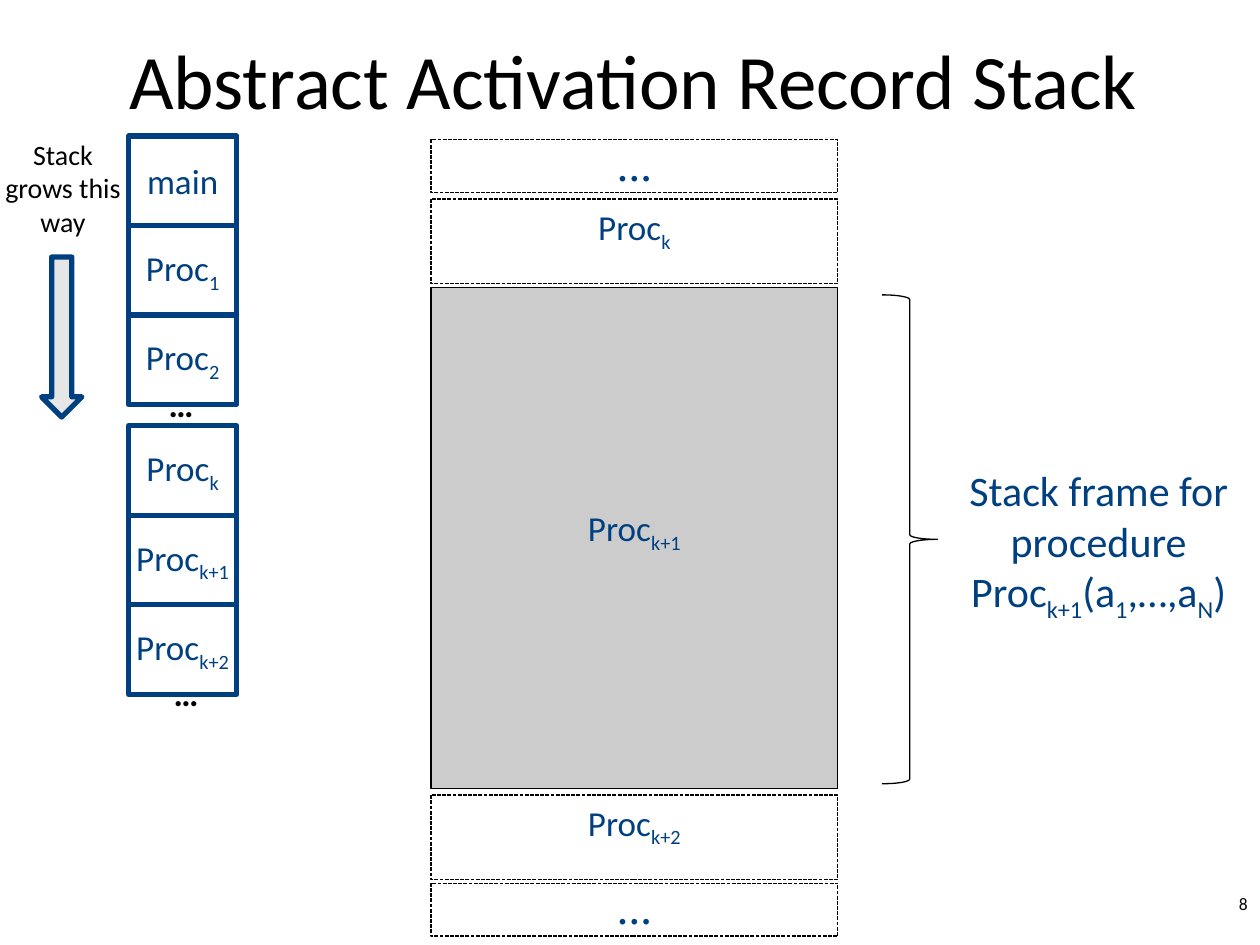
from pptx import Presentation
from pptx.dml.color import RGBColor
from pptx.enum.dml import MSO_LINE
from pptx.enum.shapes import MSO_SHAPE
from pptx.enum.text import MSO_ANCHOR, PP_ALIGN
from pptx.util import Emu, Pt

PX = 9144
TITLE_ONLY = 5
RECTANGLE, BRACE, ARROW = MSO_SHAPE.RECTANGLE, MSO_SHAPE.LEFT_BRACE, MSO_SHAPE.DOWN_ARROW
SHORT_DASH = MSO_LINE.SQUARE_DOT
TOP, MIDDLE = MSO_ANCHOR.TOP, MSO_ANCHOR.MIDDLE
LEFT, CENTER, RIGHT = PP_ALIGN.LEFT, PP_ALIGN.CENTER, PP_ALIGN.RIGHT

BLACK, NAVY = "000000", "004080"
LABEL = {"size": 20, "color": NAVY}
DOTS = {"size": 20, "color": NAVY, "name": "Times New Roman", "bold": True}
GAP_DOTS = {"size": 20, "bold": True, "align": LEFT}

CELL_LEFT, CELL_WIDTH, CELL_PITCH = 102, 86, 71
STACK_PARTS = (
    (108, ("main", "Proc|1", "Proc|2")),
    (338, ("Proc|k", "Proc|k+1", "Proc|k+2")),
)
FRAME_LEFT, FRAME_WIDTH = 342, 323
DASHED_FRAMES = (
    (111, 42, "…", DOTS),
    (158, 67, "Proc|k", LABEL),
    (631, 67, "Proc|k+2", LABEL),
    (701, 42, "…", DOTS),
)


def px(value):
    """Turn px into EMU."""
    return Emu(value * PX)


def rgb(value):
    """Turn a hex string into a colour."""
    return RGBColor.from_string(value)


def write(box, lines, size, color=BLACK, name="Calibri", bold=False, align=CENTER,
          anchor=TOP, wrap=True, margin_top=5):
    """Write lines in which every second part between bars is a subscript."""
    frame = box.text_frame
    layout = {"vertical_anchor": anchor, "word_wrap": wrap, "margin_top": px(margin_top)}
    for key, value in layout.items():
        setattr(frame, key, value)
    for index, line in enumerate(lines):
        para = frame.add_paragraph() if index else frame.paragraphs[0]
        para.alignment = align
        for order, part in enumerate(line.split("|")):
            span = para.add_run()
            span.text = part
            for key, value in {"size": Pt(size), "name": name, "bold": bold}.items():
                setattr(span.font, key, value)
            span.font.color.rgb = rgb(color)
            if order % 2:
                span.font._element.set("baseline", "-25000")


def add_text(page, place, lines, **style):
    """Add a text box."""
    write(page.shapes.add_textbox(*map(px, place)), lines, **style)


def add_outline(page, kind, place, color=BLACK, width=0.75, fill=None, dash=None):
    """Add a preset shape with a line and an optional fill."""
    shape = page.shapes.add_shape(kind, *map(px, place))
    shape.shadow.inherit = False
    if fill:
        shape.fill.solid()
        shape.fill.fore_color.rgb = rgb(fill)
    else:
        shape.fill.background()
    shape.line.color.rgb = rgb(color)
    for key, value in {"width": Pt(width), "dash_style": dash}.items():
        setattr(shape.line, key, value)
    return shape


def add_title(page, text):
    """Place and format the title."""
    title = page.shapes.title
    place = {"left": 78, "top": 0, "width": 850, "height": 125}
    for key, value in place.items():
        setattr(title, key, px(value))
    write(title, [text], 44, anchor=MIDDLE)


def add_frames(page):
    """Draw the enlarged stack frames with the brace beside the current one."""
    brace = add_outline(page, BRACE, (700, 234, 44, 388))
    brace.rotation = 180
    add_text(page, (744, 364, 256, 131),
             ["Stack frame for procedure", "Proc|k+1|(a|1|,…,a|N|)"], size=24, color=NAVY)
    for top, height, label, style in DASHED_FRAMES:
        frame = add_outline(page, RECTANGLE, (FRAME_LEFT, top, FRAME_WIDTH, height),
                            dash=SHORT_DASH)
        write(frame, [label], **style)
    current = add_outline(page, RECTANGLE, (FRAME_LEFT, 228, FRAME_WIDTH, 398), fill="CCCCCC")
    write(current, ["Proc|k+1"], margin_top=174, **LABEL)


def add_stack(page):
    """Draw the whole stack and its direction of growth."""
    for top, labels in STACK_PARTS:
        for index, label in enumerate(labels):
            place = (CELL_LEFT, top + index * CELL_PITCH, CELL_WIDTH, CELL_PITCH)
            cell = add_outline(page, RECTANGLE, place, NAVY, 3)
            write(cell, [label], anchor=MIDDLE, wrap=False, **LABEL)
    add_outline(page, ARROW, (33, 204, 32, 127), NAVY, 3, fill="E6E6E6")
    add_text(page, (-17, 104, 134, 91), ["Stack", "grows this way"], size=16)
    for left, top in ((124, 299), (128, 528)):
        add_text(page, (left, top, 37, 44), ["…"], **GAP_DOTS)


def main():
    """Build and save the deck."""
    deck = Presentation()
    deck.slide_width, deck.slide_height = px(1000), px(750)
    page = deck.slides.add_slide(deck.slide_layouts[TITLE_ONLY])
    add_title(page, "Abstract Activation Record Stack")
    add_text(page, (792, 704, 208, 30), ["8"], size=10, align=RIGHT)
    add_frames(page)
    add_stack(page)
    deck.save("out.pptx")


if __name__ == "__main__":
    main()
